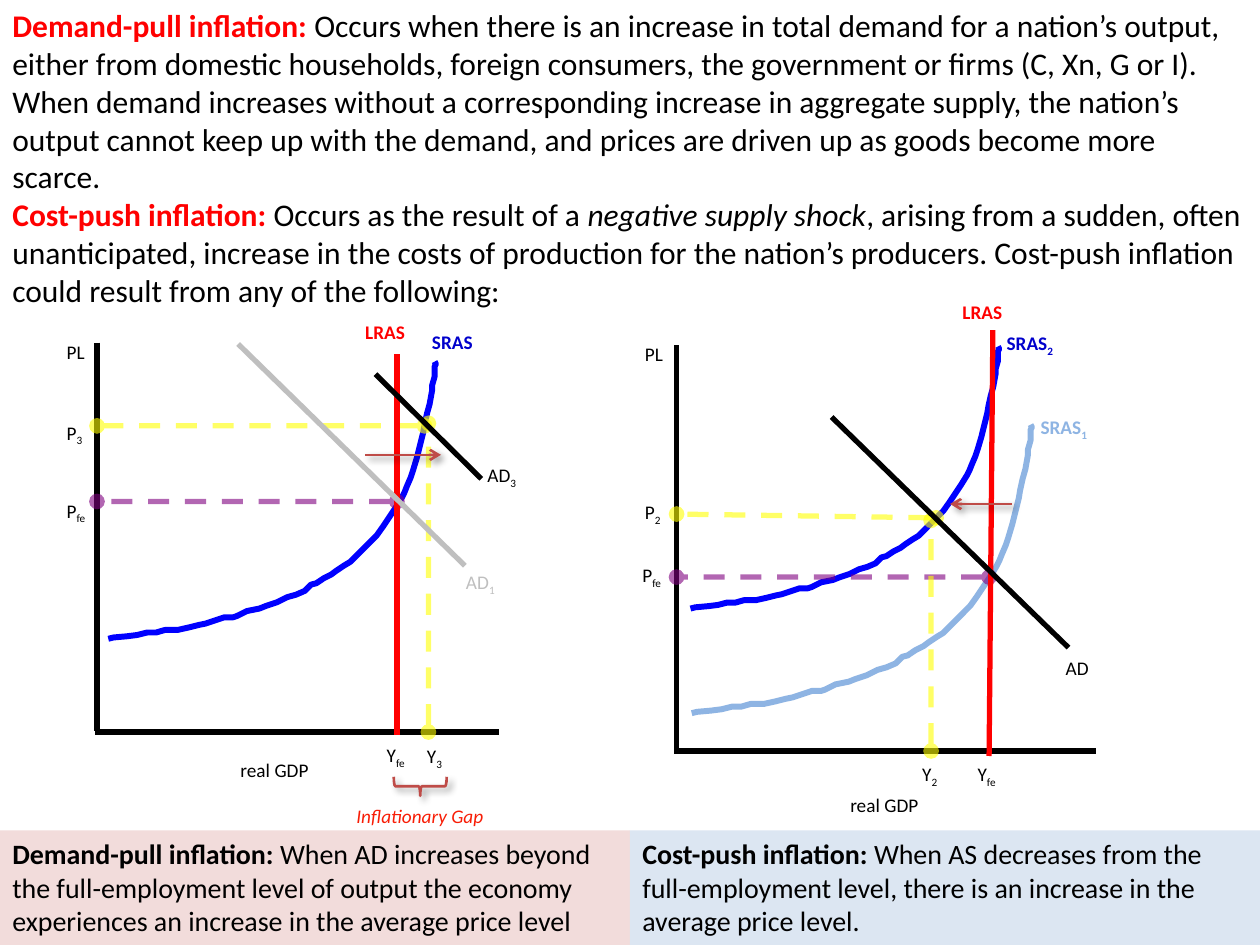
from dataclasses import dataclass

from lxml import etree
from pptx import Presentation
from pptx.dml.color import RGBColor
from pptx.enum.dml import MSO_LINE
from pptx.enum.shapes import MSO_CONNECTOR, MSO_SHAPE
from pptx.enum.text import MSO_ANCHOR, MSO_AUTO_SIZE, PP_ALIGN
from pptx.oxml.ns import qn
from pptx.util import Inches, Pt

STRAIGHT = MSO_CONNECTOR.STRAIGHT
RECTANGLE, BRACE = MSO_SHAPE.RECTANGLE, MSO_SHAPE.LEFT_BRACE
DASH = MSO_LINE.DASH
TOP, LEFT = MSO_ANCHOR.TOP, PP_ALIGN.LEFT
FIT = MSO_AUTO_SIZE.SHAPE_TO_FIT_TEXT


@dataclass(frozen=True)
class Theme:
    font: str = "Calibri"
    intro_size: float = 18
    caption_size: float = 16
    label_size: float = 11
    line_width: float = 3
    curve_width: float = 3.39
    accent_width: float = 1.5
    ink: str = "000000"
    red: str = "FF0000"
    blue: str = "0000FF"
    blue_text: str = "0000CC"
    pale_blue: str = "8EB4E3"
    grey: str = "BFBFBF"
    purple: str = "800080"
    yellow: str = "FFFF00"
    accent: str = "BF4C48"
    gap_text: str = "F81D06"
    pink_fill: str = "F2DCDB"
    blue_fill: str = "DCE6F2"


THEME = Theme()
LABEL_HEIGHT = 0.29

# Aggregate supply curve, drawn in a 2.6 by 2.2 inch frame and scaled per use
CURVE_FRAME = (2.6, 2.2)
CURVE = [
    (0, 2.2), (0.04, 2.19), (0.15, 2.18), (0.23, 2.17), (0.31, 2.15), (0.38, 2.15),
    (0.45, 2.13), (0.55, 2.13), (0.64, 2.11), (0.72, 2.09), (0.77, 2.08),
    (0.86, 2.05), (0.92, 2.03), (0.99, 2.03), (1.02, 2.02), (1.1, 1.98),
    (1.2, 1.96), (1.25, 1.94), (1.34, 1.91), (1.42, 1.87), (1.49, 1.85),
    (1.56, 1.82), (1.61, 1.77), (1.65, 1.76), (1.71, 1.72), (1.77, 1.69),
    (1.81, 1.66), (1.87, 1.62), (1.92, 1.59), (1.98, 1.53), (2.02, 1.49),
    (2.08, 1.43), (2.13, 1.38), (2.18, 1.31), (2.24, 1.22), (2.28, 1.16),
    (2.33, 1.08), (2.35, 1.04), (2.37, 0.99), (2.4, 0.92), (2.42, 0.86),
    (2.45, 0.76), (2.48, 0.64), (2.5, 0.56), (2.51, 0.5), (2.53, 0.41),
    (2.55, 0.34), (2.57, 0.23), (2.57, 0.19), (2.59, 0.12), (2.59, 0.04),
    (2.6, 0.02), (2.59, 0),
]


class SlideBuilder:
    def __init__(self, page, theme):
        self.page, self.theme = page, theme
        self.shapes = page.shapes

    def start_group(self):
        """Place the elements that follow in a new group."""
        self.shapes = self.page.shapes.add_group_shape().shapes

    def end_group(self):
        self.shapes = self.page.shapes

    def set_effects(self, shape, shadow=False):
        """Replace the inherited effect; call once the line is set."""
        effects = etree.SubElement(shape._element.spPr, qn("a:effectLst"))
        if shadow:
            outer = etree.SubElement(
                effects, qn("a:outerShdw"), blurRad=str(Pt(4)), dist=str(Pt(3)),
                dir=str(45 * 60000), rotWithShape="0")
            color = etree.SubElement(outer, qn("a:srgbClr"), val=self.theme.ink)
            etree.SubElement(color, qn("a:alpha"), val="40000")

    def set_line(self, shape, color, width):
        shape.line.color.rgb = RGBColor.from_string(color)
        shape.line.width = Pt(width)

    def fill_text(self, shape, paragraphs, size):
        """Fill a shape with paragraphs, each a list of (text, format) pairs."""
        frame = shape.text_frame
        frame.word_wrap, frame.auto_size = True, FIT
        frame.vertical_anchor = TOP
        for index, spans in enumerate(paragraphs):
            para = frame.add_paragraph() if index else frame.paragraphs[0]
            para.alignment = LEFT
            for text, style in spans:
                span = para.add_run()
                span.text = text
                values = {"name": self.theme.font, "size": Pt(size), **style}
                color = values.pop("color", self.theme.ink)
                subscript = values.pop("subscript", False)
                for name, value in values.items():
                    setattr(span.font, name, value)
                span.font.color.rgb = RGBColor.from_string(color)
                if subscript:
                    span._r.get_or_add_rPr().set("baseline", "-25000")

    def text(self, left, top, width, height, paragraphs, size):
        box = self.shapes.add_textbox(*map(Inches, (left, top, width, height)))
        self.fill_text(box, paragraphs, size)

    def label(self, left, top, width, text, **style):
        """Add a chart label; what follows an underscore is a subscript."""
        base, _, index = text.partition("_")
        spans = [(base, style)]
        if index:
            spans.append((index, {**style, "subscript": True}))
        self.text(left, top, width, LABEL_HEIGHT, [spans], self.theme.label_size)

    def line(self, start, end, color, width=None, shadow=False):
        line = self.shapes.add_connector(STRAIGHT, *map(Inches, (*start, *end)))
        self.set_line(line, color, width or self.theme.line_width)
        self.set_effects(line, shadow)
        return line.line

    def guide(self, start, end, color):
        """Draw a translucent dashed line with round ends."""
        stroke = self.line(start, end, color)
        stroke.dash_style = DASH
        outline = stroke._get_or_add_ln()
        etree.SubElement(outline.find(".//" + qn("a:srgbClr")), qn("a:alpha"), val="60000")
        for tag in ("a:headEnd", "a:tailEnd"):
            etree.SubElement(outline, qn(tag), type="oval")

    def arrow(self, start, end):
        stroke = self.line(start, end, self.theme.accent, self.theme.accent_width, True)
        etree.SubElement(stroke._get_or_add_ln(), qn("a:tailEnd"), type="arrow")

    def supply_curve(self, left, top, width, height, color):
        across, down = width / CURVE_FRAME[0], height / CURVE_FRAME[1]
        points = [(Inches(left + x * across), Inches(top + y * down)) for x, y in CURVE]
        builder = self.shapes.build_freeform(*points[0])
        builder.add_line_segments(points[1:], close=False)
        curve = builder.convert_to_shape()
        curve.fill.background()
        self.set_line(curve, color, self.theme.curve_width)
        self.set_effects(curve)

    def brace(self, left, top, width, height):
        brace = self.shapes.add_shape(BRACE, *map(Inches, (left, top, width, height)))
        brace.rotation = 270
        brace.fill.background()
        self.set_line(brace, self.theme.accent, self.theme.accent_width)
        self.set_effects(brace, shadow=True)

    def caption(self, left, fill, title, body):
        box = self.shapes.add_shape(RECTANGLE, *map(Inches, (left, 6.59, 5, 0.91)))
        box.fill.solid()
        box.fill.fore_color.rgb = RGBColor.from_string(fill)
        box.line.fill.background()
        box.shadow.inherit = False
        self.fill_text(box, [[(title, {"bold": True}), (body, {})]], self.theme.caption_size)


def add_intro(slide):
    heading = {"bold": True, "color": THEME.red}
    slide.text(0, 0, 10, 3.13, [
        [("Demand-pull inflation: ", heading),
         ("Occurs when there is an increase in total demand for a nation’s output, either from "
          "domestic households, foreign consumers, the government or firms (C, Xn, G or I). When "
          "demand increases without a corresponding increase in aggregate supply, the nation’s "
          "output cannot keep up with the demand, and prices are driven up as goods become more "
          "scarce.", {})],
        [("Cost-push inflation: ", heading), ("Occurs as the result of a ", {}),
         ("negative supply shock", {"italic": True}),
         (", arising from a sudden, often unanticipated, increase in the costs of production for "
          "the nation’s producers. Cost-push inflation could result from any of the following:",
          {})],
    ], THEME.intro_size)


def add_cost_push_chart(slide):
    slide.start_group()
    slide.line((5.37, 2.74), (5.37, 5.95), THEME.ink)
    slide.line((5.35, 5.96), (8.7, 5.96), THEME.ink)
    slide.label(5.02, 2.67, 0.61, "PL")
    slide.label(8.16, 3.25, 0.79, "SRAS_1", bold=True, color=THEME.pale_blue)
    slide.supply_curve(5.49, 3.37, 2.7, 2.29, THEME.pale_blue)
    slide.label(7.54, 2.33, 0.68, "LRAS", bold=True, color=THEME.red)
    slide.supply_curve(5.48, 2.75, 2.45, 2.08, THEME.blue)
    slide.label(7.89, 2.58, 0.81, "SRAS_2", bold=True, color=THEME.blue_text)
    slide.label(6.65, 6.25, 1.02, "real GDP")
    slide.guide((7.85, 4.58), (5.37, 4.58), THEME.purple)
    slide.label(5, 4.42, 0.43, "P_fe")
    slide.label(7.66, 6, 0.45, "Y_fe")
    slide.guide((7.43, 4.11), (5.37, 4.08), THEME.yellow)
    slide.label(5.02, 3.92, 0.43, "P_2")
    slide.guide((7.39, 5.96), (7.39, 4.13), THEME.yellow)
    slide.label(7.22, 6, 0.45, "Y_2")
    slide.line((7.85, 6), (7.88, 2.62), THEME.red)
    slide.line((6.6, 3.31), (8.48, 5.14), THEME.ink)
    slide.label(8.36, 5.16, 0.67, "AD")
    slide.arrow((8.03, 4), (7.54, 4))
    slide.end_group()


def add_captions(slide):
    slide.start_group()
    slide.caption(0, THEME.pink_fill, "Demand-pull inflation: ",
                  "When AD increases beyond the full-employment level of output the economy "
                  "experiences an increase in the average price level")
    slide.caption(5, THEME.blue_fill, "Cost-push inflation: ",
                  "When AS decreases from the full-employment level, there is an increase in "
                  "the average price level.")
    slide.end_group()


def add_demand_pull_chart(slide):
    slide.start_group()
    slide.line((0.77, 2.72), (0.77, 5.8), THEME.ink)
    slide.line((0.75, 5.81), (3.96, 5.81), THEME.ink)
    slide.label(0.43, 2.65, 0.59, "PL")
    slide.label(3.33, 2.57, 0.65, "SRAS", bold=True, color=THEME.blue_text)
    slide.supply_curve(0.86, 2.87, 2.6, 2.2, THEME.blue)
    slide.label(2.8, 2.49, 0.65, "LRAS", bold=True, color=THEME.red)
    slide.label(1.81, 5.97, 0.98, "real GDP")
    slide.guide((3.15, 3.98), (0.77, 3.98), THEME.purple)
    slide.label(0.43, 3.91, 0.41, "P_fe")
    slide.label(2.97, 5.85, 0.43, "Y_fe")
    slide.guide((3.37, 3.38), (0.77, 3.38), THEME.yellow)
    slide.guide((3.4, 5.81), (3.4, 3.36), THEME.yellow)
    slide.label(0.43, 3.29, 0.41, "P_3")
    slide.label(3.29, 5.86, 0.41, "Y_3")
    slide.line((3.15, 5.83), (3.15, 2.81), THEME.red)
    slide.line((1.89, 2.73), (3.69, 4.49), THEME.grey)
    slide.label(3.6, 4.48, 0.64, "AD_1", color=THEME.grey)
    slide.line((2.98, 2.97), (3.82, 3.8), THEME.ink)
    slide.label(3.77, 3.63, 0.64, "AD_3")
    slide.arrow((2.9, 3.61), (3.5, 3.61))
    slide.label(2.73, 6.33, 1.67, "Inflationary Gap", italic=True, color=THEME.gap_text)
    slide.brace(3.26, 6.03, 0.15, 0.42)
    slide.end_group()


def main():
    deck = Presentation()
    deck.slide_width, deck.slide_height = Inches(10), Inches(7.5)
    slide = SlideBuilder(deck.slides.add_slide(deck.slide_layouts[6]), THEME)
    add_intro(slide)
    add_cost_push_chart(slide)
    add_captions(slide)
    add_demand_pull_chart(slide)
    deck.save("out.pptx")


if __name__ == "__main__":
    main()
